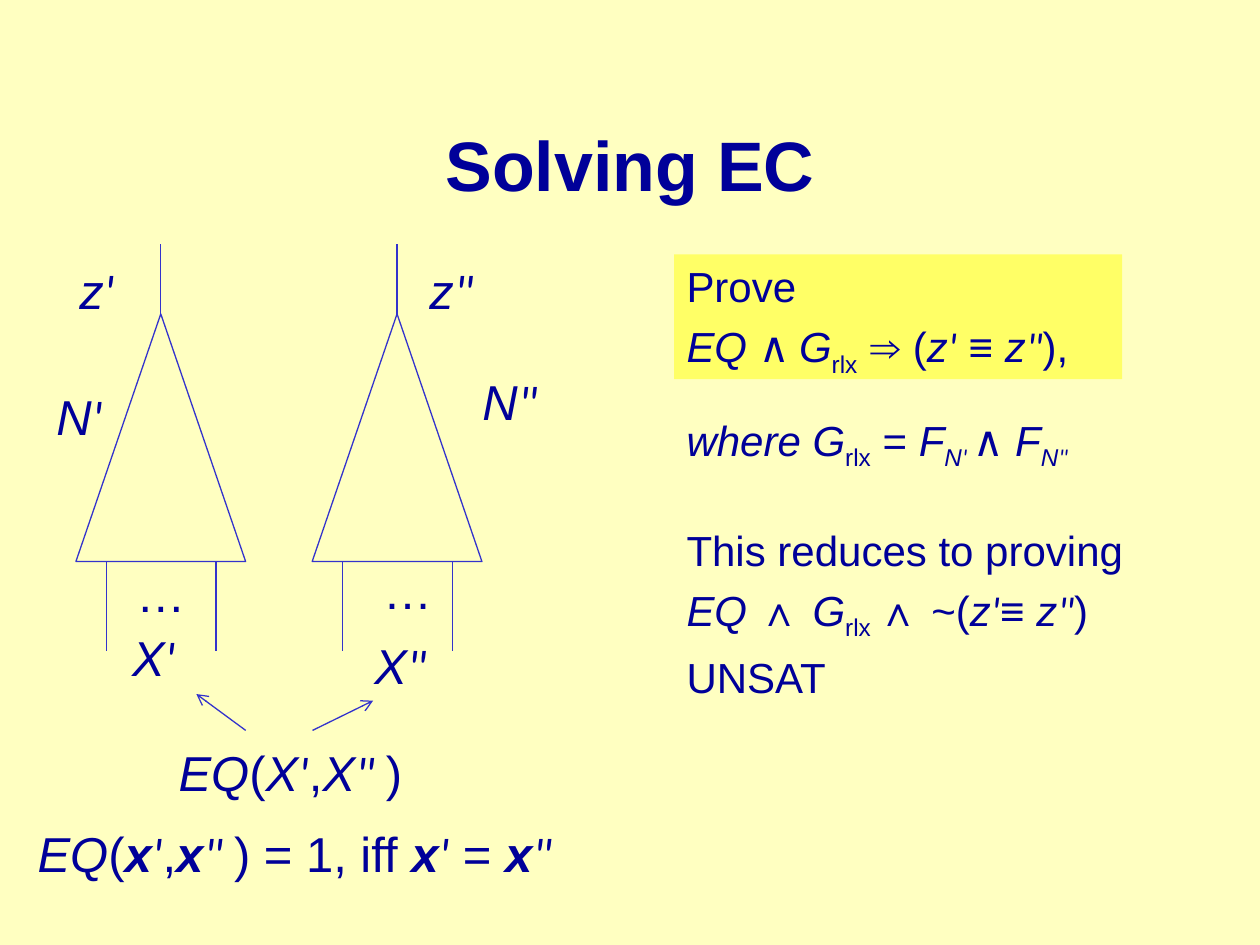
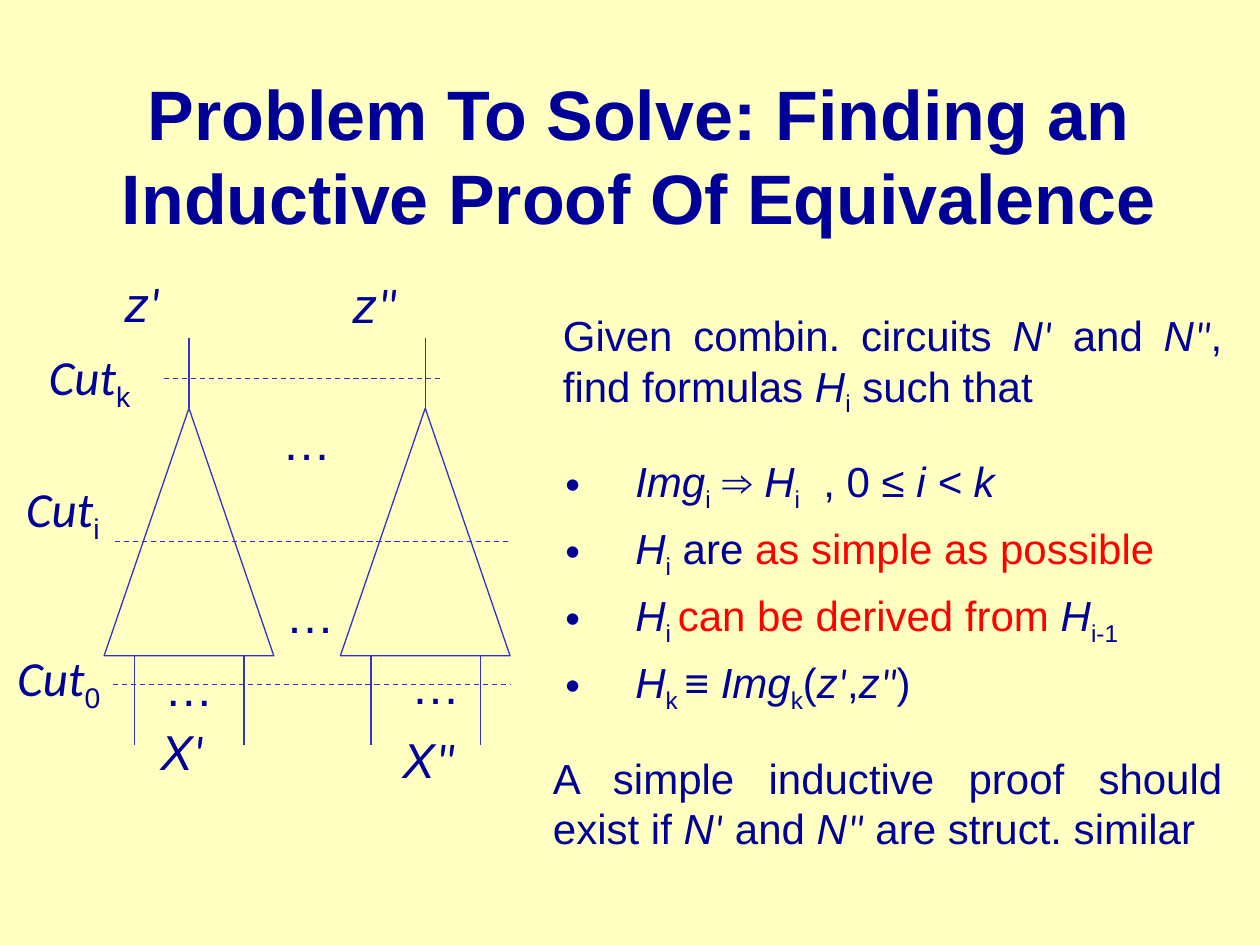
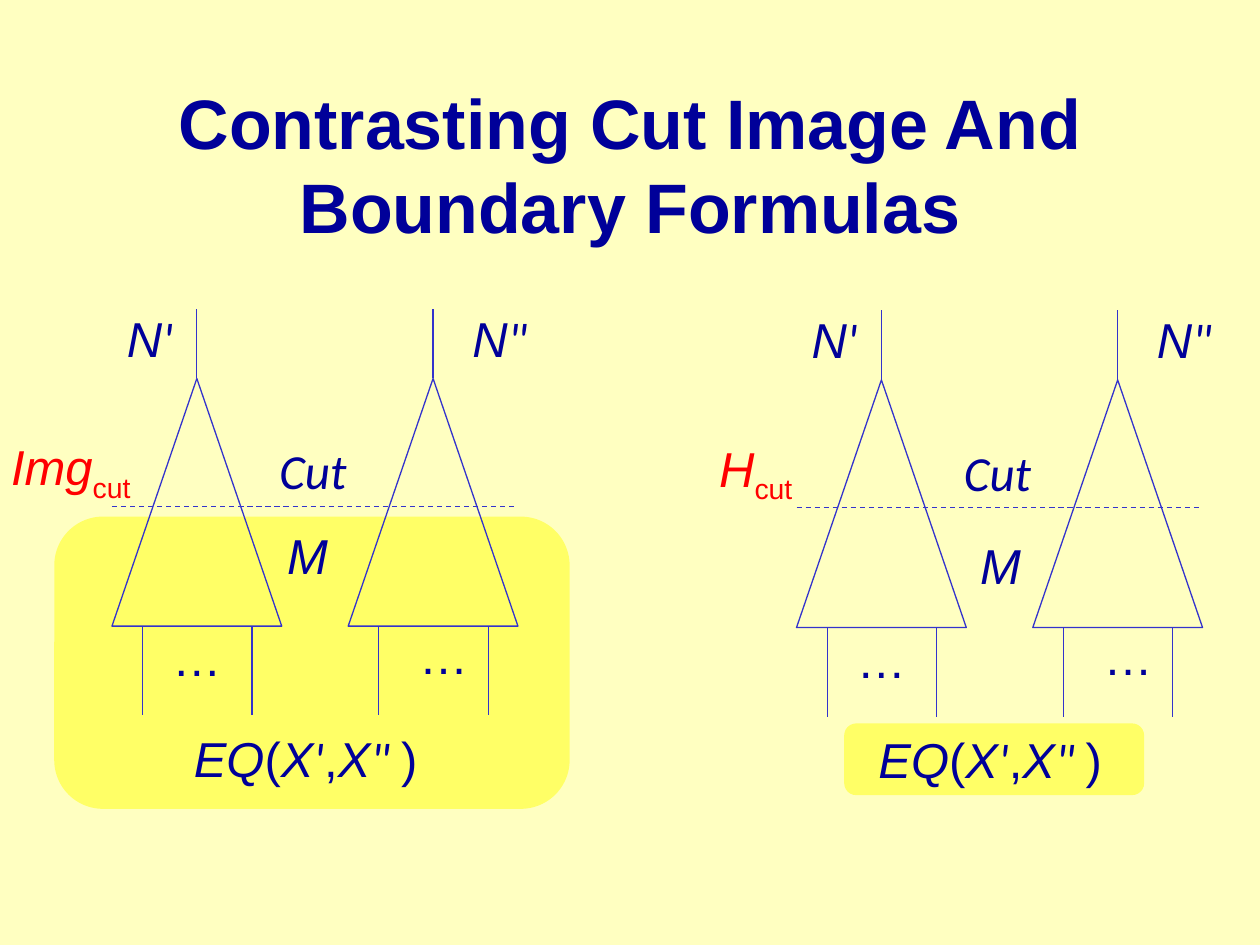
from lxml.etree import SubElement
from pptx import Presentation
from pptx.dml.color import RGBColor
from pptx.enum.dml import MSO_LINE
from pptx.enum.shapes import MSO_CONNECTOR, MSO_SHAPE
from pptx.enum.text import MSO_ANCHOR, MSO_AUTO_SIZE, PP_ALIGN
from pptx.oxml.ns import qn
from pptx.util import Pt

COLORS = {"background": "FFFFC1", "text": "000099", "line": "3333CC",
          "highlight": "FFFF66", "emphasis": "FF0000"}
TEXT_FONT, MARK_FONT = "Arial", "Calibri"
TITLE_SIZE, LABEL_SIZE, BODY_SIZE = 40, 28, 24
LABEL_HEIGHT = 41
SPACE_BEFORE = 0.23
BULLET_INDENT = 40
TITLE_WIDTH, TITLE_HEIGHT = 612, 90

TRIANGLE_WIDTH, TRIANGLE_HEIGHT = 97, 141.5
CIRCUIT_PITCH = 135
STEM_LENGTH, LEG_LENGTH = 40, 51
LEG_OFFSETS = (17.5, 80)
PANEL_SHIFT = (391.2, 0.8)


# Run styles: i italic, b bold, s subscript, c mark font, r emphasis colour
def marked(letter, mark, style="i"):
    return [(letter, style), (mark, "ic")]


N1, N2 = marked("N", "'"), marked("N", '"')
X1, X2 = marked("X", "'"), marked("X", '"')
Z1, Z2 = marked("z", "'"), marked("z", '"')
BOLD_X1 = marked("x", "'", "bi")
DOTS = [("…", "")]
CUT = [("Cut", "ic")]
INPUTS_EQUAL = [("EQ", "i"), ("(", ""), *X1, (",", ""), *marked("X", '" '), (")", "")]
INPUTS_MEANING = [("EQ", "i"), ("(", ""), *BOLD_X1, (",", ""), *marked("x", '" ', "bi"),
                  (") = 1, iff ", ""), *BOLD_X1, (" = ", ""), *marked("x", '" ', "bi")]

DOT_LABELS = [(27.4, 139, 42.5, DOTS), (168.4, 137.5, 42.5, DOTS)]
INPUT_LABELS = [(25, 175.7, 39.6, X1), (163.4, 180, 44.6, X2)]

PROVE = [
    [("Prove", "")],
    [("EQ ", "i"), ("∧ ", "c"), ("G", "i"), ("rlx  ", "s"), ("⇒ (", ""), *Z1,
     (" ≡ ", ""), *Z2, ("), ", "")],
]
WHERE = [[("where G", "i"), ("rlx", "s"), (" = ", ""), ("F", "i"), ("N", "is"), ("' ", "ics"),
          ("∧", "c"), (" F", "i"), ("N", "is"), ('"', "ics")]]
REDUCES = [
    [("This reduces to proving  ", "")],
    [("EQ ", "i"), ("∧ ", ""), ("G", "i"), ("rlx ", "s"), ("∧ ~(", ""), *Z1,
     ("≡ ", ""), *Z2, (") ", "")],
    [("UNSAT ", "")],
]
GIVEN = [[("Given combin. circuits ", ""), *N1, (" and ", ""), *N2, (", find formulas ", ""),
          ("H", "i"), ("i", "s"), (" such that", "")]]
CONDITIONS = [
    [("Img", "i"), ("i", "s"), (" ⇒ ", ""), ("H", "i"), ("i", "s"), ("  , 0 ≤ ", ""),
     ("i < k ", "i")],
    [("H", "i"), ("i", "s"), (" are ", ""), ("as simple as possible", "r")],
    [("H", "i"), ("i ", "s"), ("can be derived from ", "r"), ("H", "i"), ("i-1", "s")],
    [("H", "i"), ("k ", "s"), ("≡ ", "b"), ("Img", "i"), ("k", "s"), ("(", ""), *Z1,
     (",", ""), *Z2, (")", "")],
]
CONCLUSION = [[("A simple inductive proof should exist if ", ""), *N1, (" and ", ""), *N2,
               (" are struct. similar", "")]]

SOLVING = {
    "title": ("Solving EC", 54, 48.2),
    "circuits": (43.4, 179.4),
    "labels": [(25.2, 217.4, 41, N1), (268.6, 208.8, 46, N2), (38.2, 145.4, 34.6, Z1),
               (238.3, 145.4, 40.3, Z2), (95, 420.5, 144, INPUTS_EQUAL),
               (14.4, 467.3, 320.4, INPUTS_MEANING)],
    "arrows": [(140.4, 417.4, 112.2, 396.6), (178.6, 417.4, 213.2, 400.4)],
}
INDUCTION = {
    "title": ("Problem To Solve: Finding an Inductive Proof Of Equivalence", 59, 43.2),
    "circuits": (59.5, 233.3),
    "labels": [(64.1, 152.6, 34.6, Z1), (194.4, 153.4, 40.3, Z2),
               (154.1, 231.8, 42.5, DOTS), (156.2, 330.5, 42.5, DOTS),
               (20.9, 194.4, 62, CUT + [("k", "s")]), (7.9, 270, 57.6, CUT + [("i", "s")]),
               (2.9, 366.5, 62.6, CUT + [("0", "s")])],
    "cuts": [(93.6, 216.2, 253.4), (65.5, 309.6, 291.6), (64.4, 391.2, 291.6)],
}
CONTRAST_TITLE = ("Contrasting Cut Image And Boundary Formulas", 54, 48.2)
CONTRAST_CIRCUITS = (64, 216.3)
CONTRAST_LABELS = [(65.5, 172.8, 41, N1), (262.8, 172.8, 46, N2),
                   (103.7, 412.6, 144, INPUTS_EQUAL), (152.6, 248.4, 53.3, CUT)]
CONTRAST_CUT = (64, 289.4, 296)
PANELS = [
    {"highlight": (31, 295.2, 294.5, 167),
     "labels": [(157, 296.6, 38.2, [("M", "i")]),
                (-0.7, 246.2, 87.1, [("Img", "ir"), ("cut", "sr")])]},
    {"highlight": (91.2, 412.6, 171.4, 41),
     "labels": [(161.8, 301.6, 38.2, [("M", "i")]),
                (12.7, 246.2, 59.8, [("H", "ir"), ("cut", "sr")])]},
]


def rgb(name):
    return RGBColor.from_string(COLORS[name])


def add_run(paragraph, text, style, size):
    run = paragraph.add_run()
    run.text = text
    font = run.font
    font.name = MARK_FONT if "c" in style else TEXT_FONT
    font.size = Pt(size)
    font.bold = "b" in style
    font.italic = "i" in style
    font.color.rgb = rgb("emphasis" if "r" in style else "text")
    if "s" in style:
        run._r.get_or_add_rPr().set("baseline", "-25000")


def add_bullet(paragraph):
    properties = paragraph._p.get_or_add_pPr()
    properties.set("marL", str(Pt(BULLET_INDENT)))
    properties.set("indent", str(-Pt(BULLET_INDENT)))
    SubElement(properties, qn("a:buFont")).set("typeface", TEXT_FONT)
    SubElement(properties, qn("a:buChar")).set("char", "•")


def write_paragraphs(shape, paragraphs, size, wrap=True, bulleted=False):
    frame = shape.text_frame
    frame.word_wrap = wrap
    frame.auto_size = MSO_AUTO_SIZE.SHAPE_TO_FIT_TEXT
    frame.vertical_anchor = MSO_ANCHOR.TOP
    for index, runs in enumerate(paragraphs):
        paragraph = frame.add_paragraph() if index else frame.paragraphs[0]
        paragraph.alignment = PP_ALIGN.JUSTIFY
        paragraph.space_before = Pt(size * SPACE_BEFORE)
        if bulleted:
            add_bullet(paragraph)
        for text, style in runs:
            add_run(paragraph, text, style, size)


def add_text(slide, box, paragraphs, size=BODY_SIZE, wrap=True, bulleted=False):
    shape = slide.shapes.add_textbox(*map(Pt, box))
    write_paragraphs(shape, paragraphs, size, wrap, bulleted)


def add_labels(slide, labels, origin=(0, 0)):
    for x, y, width, runs in labels:
        add_text(slide, (origin[0] + x, origin[1] + y, width, LABEL_HEIGHT),
                 [runs], LABEL_SIZE, wrap=False)


def add_line(slide, x1, y1, x2, y2, dashed=False, arrow=False):
    connector = slide.shapes.add_connector(MSO_CONNECTOR.STRAIGHT, *map(Pt, (x1, y1, x2, y2)))
    line = connector.line
    line.color.rgb = rgb("line")
    line.width = Pt(0.75)
    if dashed:
        line.dash_style = MSO_LINE.DASH
    if arrow:
        SubElement(line._get_or_add_ln(), qn("a:tailEnd")).set("type", "arrow")
    SubElement(connector._element.spPr, qn("a:effectLst"))
    return connector


def add_cut(slide, x1, y, x2):
    add_line(slide, x1, y, x2, y, dashed=True)


def add_highlight(slide, kind, box):
    shape = slide.shapes.add_shape(kind, *map(Pt, box))
    shape.shadow.inherit = False
    shape.fill.solid()
    shape.fill.fore_color.rgb = rgb("highlight")
    shape.line.fill.background()
    return shape


def add_circuit(slide, left, top):
    triangle = slide.shapes.add_shape(MSO_SHAPE.ISOSCELES_TRIANGLE, Pt(left), Pt(top),
                                      Pt(TRIANGLE_WIDTH), Pt(TRIANGLE_HEIGHT))
    triangle.shadow.inherit = False
    triangle.fill.background()
    triangle.line.color.rgb = rgb("line")
    triangle.line.width = Pt(0.75)
    apex, base = left + TRIANGLE_WIDTH / 2, top + TRIANGLE_HEIGHT
    stem = add_line(slide, apex, top, apex, top - STEM_LENGTH)
    stem.begin_connect(triangle, 0)
    for offset in LEG_OFFSETS:
        add_line(slide, left + offset, base, left + offset, base + LEG_LENGTH)


def add_circuit_pair(slide, left, top):
    for index in range(2):
        add_circuit(slide, left + index * CIRCUIT_PITCH, top)
    add_labels(slide, DOT_LABELS, (left, top))


def add_titled_slide(presentation, text, left, top):
    slide = presentation.slides.add_slide(presentation.slide_layouts[5])
    title = slide.shapes.title
    title.left, title.top = Pt(left), Pt(top)
    title.width, title.height = Pt(TITLE_WIDTH), Pt(TITLE_HEIGHT)
    frame = title.text_frame
    frame.word_wrap = True
    frame.auto_size = MSO_AUTO_SIZE.NONE
    frame.vertical_anchor = MSO_ANCHOR.MIDDLE
    paragraph = frame.paragraphs[0]
    paragraph.alignment = PP_ALIGN.CENTER
    add_run(paragraph, text, "b", TITLE_SIZE)
    return slide


def add_diagram_slide(presentation, content):
    slide = add_titled_slide(presentation, *content["title"])
    add_circuit_pair(slide, *content["circuits"])
    add_labels(slide, INPUT_LABELS, content["circuits"])
    for cut in content.get("cuts", []):
        add_cut(slide, *cut)
    for arrow in content.get("arrows", []):
        add_line(slide, *arrow, arrow=True)
    add_labels(slide, content["labels"])
    return slide


def add_solving_slide(presentation):
    slide = add_diagram_slide(presentation, SOLVING)
    goal = add_highlight(slide, MSO_SHAPE.RECTANGLE, (385.2, 145.4, 256, 71.3))
    write_paragraphs(goal, PROVE, BODY_SIZE)
    add_text(slide, (385.2, 233.3, 238.3, 36), WHERE, wrap=False)
    add_text(slide, (385.2, 296, 294.5, 105.8), REDUCES)


def add_induction_slide(presentation):
    slide = add_diagram_slide(presentation, INDUCTION)
    add_text(slide, (314.6, 173.5, 391, 65.5), GIVEN)
    add_text(slide, (316, 257, 360, 141), CONDITIONS, bulleted=True)
    add_text(slide, (308.9, 426.2, 396.7, 65.5), CONCLUSION)


def add_contrast_slide(presentation):
    slide = add_titled_slide(presentation, *CONTRAST_TITLE)
    for index, panel in enumerate(PANELS):
        shift_x, shift_y = (index * distance for distance in PANEL_SHIFT)
        x, y, width, height = panel["highlight"]
        add_highlight(slide, MSO_SHAPE.ROUNDED_RECTANGLE,
                      (x + shift_x, y + shift_y, width, height))
        left, top = CONTRAST_CIRCUITS
        add_circuit_pair(slide, left + shift_x, top + shift_y)
        start, level, end = CONTRAST_CUT
        add_cut(slide, start + shift_x, level + shift_y, end + shift_x)
        add_labels(slide, CONTRAST_LABELS + panel["labels"], (shift_x, shift_y))


def main():
    presentation = Presentation()
    presentation.slide_width, presentation.slide_height = Pt(720), Pt(540)
    background = presentation.slide_master.background.fill
    background.solid()
    background.fore_color.rgb = rgb("background")
    add_solving_slide(presentation)
    add_induction_slide(presentation)
    add_contrast_slide(presentation)
    presentation.save("out.pptx")


if __name__ == "__main__":
    main()
